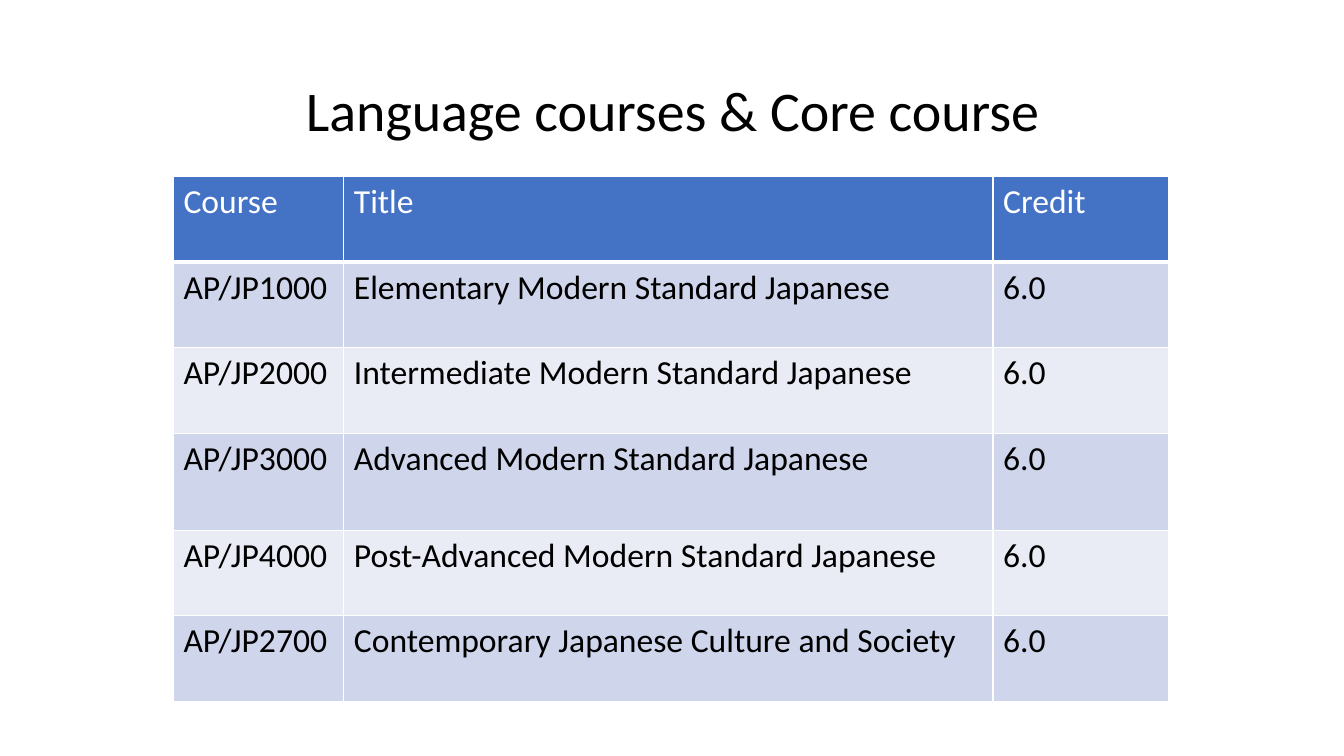
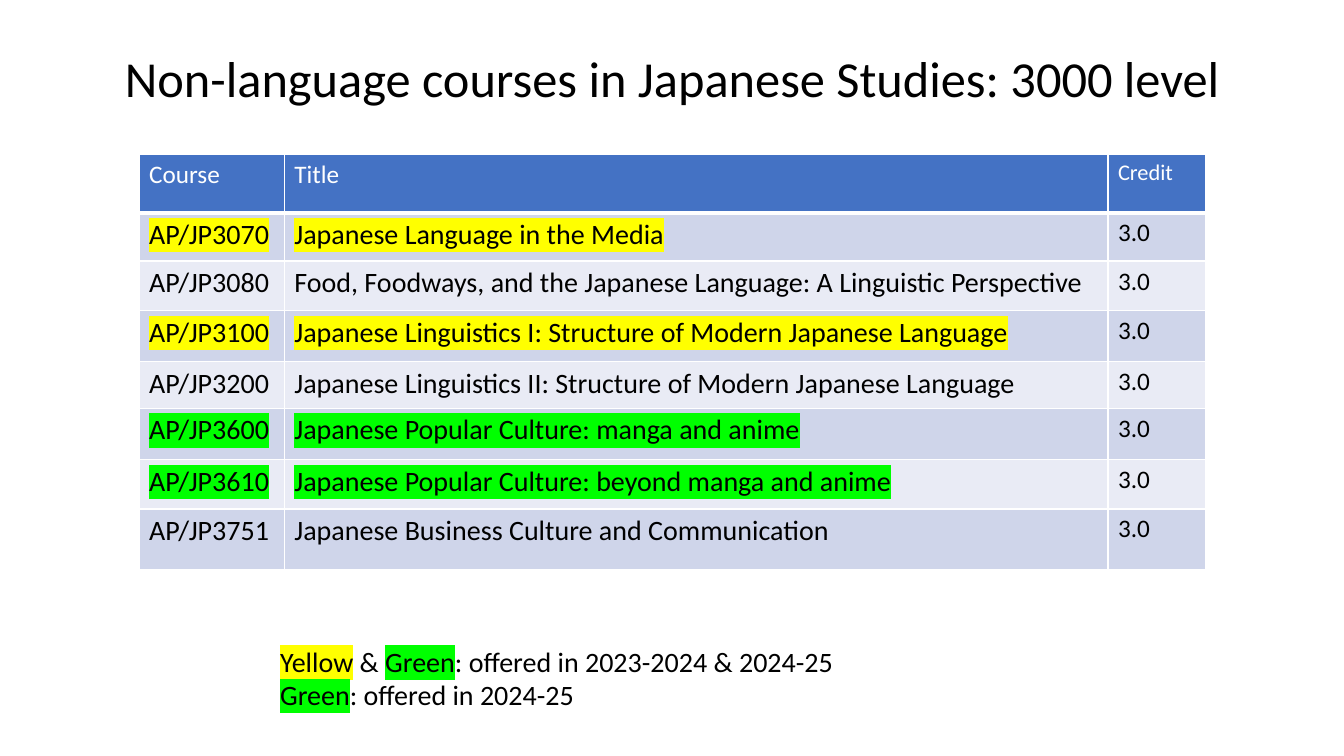
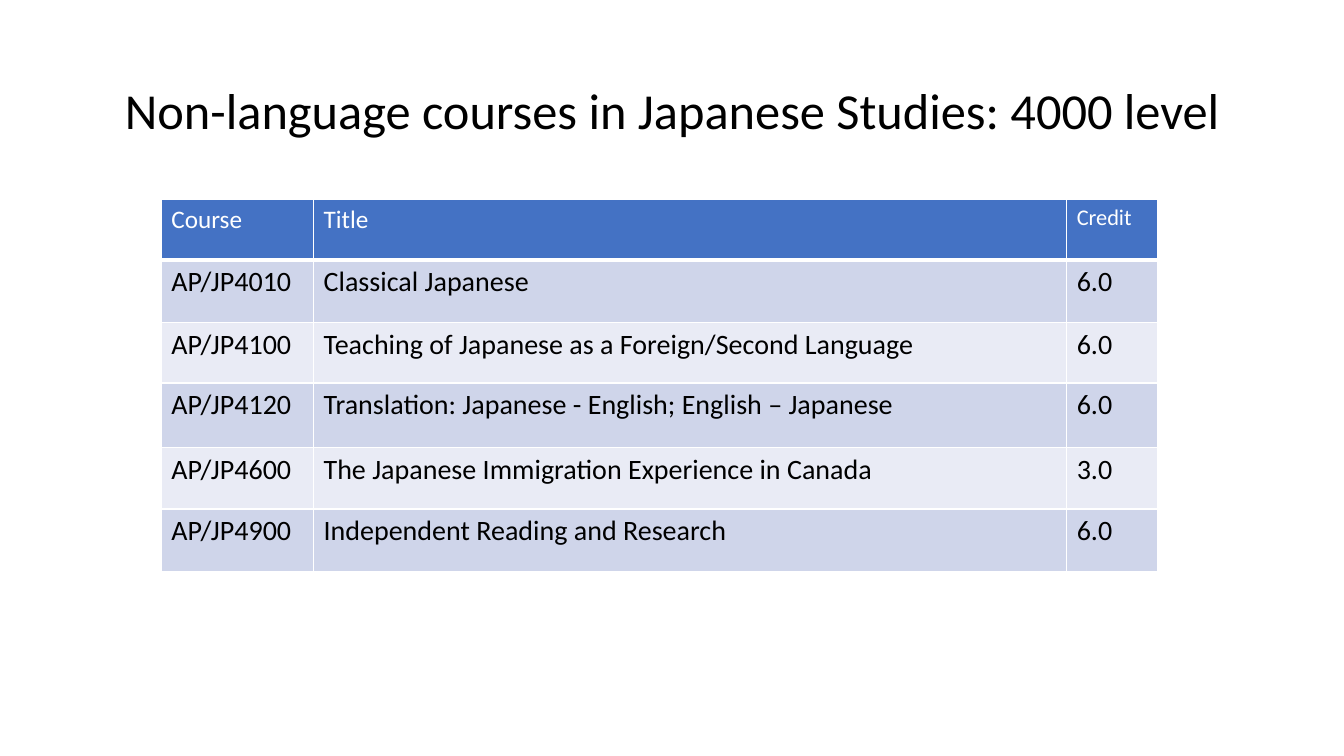
"""Course tables of a Japanese Studies programme, one per slide."""
from dataclasses import dataclass

from lxml import etree
from pptx import Presentation
from pptx import util as u
from pptx.dml.color import RGBColor
from pptx.enum import text
from pptx.oxml.ns import qn

PX = u.Inches(1) // 100
HEADINGS = ("Course", "Title", "Credit")


@dataclass(frozen=True)
class Theme:
    """Colours, font and type sizes shared by all slides."""
    font: str = "Calibri"
    ink: str = "000000"
    white: str = "FFFFFF"
    header: str = "4472C4"
    bands: tuple = ("CFD5EA", "E9EBF5")
    yellow: str = "FFFF00"
    green: str = "00FF00"
    title: int = 36
    title_large: int = 40
    large: int = 24
    body: int = 20
    label: int = 18
    small: int = 16
    rule: int = 1
    header_rule: int = 3


T = Theme()


def px(*lengths):
    """Turn pixel lengths into EMU."""
    return [n * PX for n in lengths]


def add_colour(parent, tag, colour):
    """Append an element that holds one RGB colour."""
    node = etree.SubElement(parent, qn(tag))
    etree.SubElement(node, qn("a:srgbClr")).set("val", colour)


def write(p, words, size=T.body, colour=T.ink, highlight=None):
    """Add one formatted run to a paragraph."""
    r = p.add_run()
    r.text = words
    r.font.size = u.Pt(size)
    r.font.color.rgb = RGBColor.from_string(colour)
    if highlight:
        add_colour(r.font._element, "a:highlight", highlight)
    r.font.name = T.font


def add_text_frame(s, box):
    """Add a wrapping text box and return its text frame."""
    tf = s.shapes.add_textbox(*px(*box)).text_frame
    tf.word_wrap = True
    return tf


def add_title(s, box, words, size=T.title):
    """Place a centred slide title in its box."""
    tf = add_text_frame(s, box)
    tf.vertical_anchor = text.MSO_ANCHOR.MIDDLE
    p = tf.paragraphs[0]
    p.alignment = text.PP_ALIGN.CENTER
    p.line_spacing = 0.9
    write(p, words, size)


def style_cell(cell, fill, bottom=T.rule):
    """Give a cell white borders and a solid fill."""
    tc_pr = cell._tc.get_or_add_tcPr()
    for side, width in zip("LRTB", (T.rule, T.rule, T.rule, bottom)):
        line = etree.SubElement(tc_pr, qn(f"a:ln{side}"), w=str(u.Pt(width)))
        add_colour(line, "a:solidFill", T.white)
    cell.fill.solid()
    cell.fill.fore_color.rgb = RGBColor.from_string(fill)


def add_courses(s, origin, widths, heights, courses, head_sizes, body_sizes, highlights=None):
    """Place a course table whose top left corner is at origin."""
    box = (*origin, sum(widths), sum(heights))
    table = s.shapes.add_table(len(heights), len(widths), *px(*box)).table
    for column, width in zip(table.columns, px(*widths)):
        column.width = width
    for row, height in zip(table.rows, px(*heights)):
        row.height = height
    for c, (words, size) in enumerate(zip(HEADINGS, head_sizes)):
        cell = table.cell(0, c)
        style_cell(cell, T.header, T.header_rule)
        write(cell.text_frame.paragraphs[0], words, size, T.white)
    for r, course in enumerate(courses, 1):
        mark = (highlights or {}).get(course[0])
        for c, (words, size) in enumerate(zip(course, body_sizes)):
            cell = table.cell(r, c)
            style_cell(cell, T.bands[(r - 1) % 2])
            write(cell.text_frame.paragraphs[0], words, size,
                  highlight=mark if c < 2 else None)


def add_legend(s, box, lines):
    """Place the key to the highlights, one paragraph per line."""
    tf = add_text_frame(s, box)
    for i, line in enumerate(lines):
        p = tf.add_paragraph() if i else tf.paragraphs[0]
        for words, mark in line:
            write(p, words, highlight=mark)


def language_slide(s):
    """Build the slide of language and core courses."""
    add_title(s, (92, 40, 1150, 145), "Language courses & Core course", T.title_large)
    add_courses(
        s, (172, 175), (169, 644, 174), (85, 85, 85, 96, 85, 85),
        [("AP/JP1000", "Elementary Modern Standard Japanese", "6.0"),
         ("AP/JP2000", "Intermediate Modern Standard Japanese", "6.0"),
         ("AP/JP3000", "Advanced Modern Standard Japanese", "6.0"),
         ("AP/JP4000", "Post-Advanced Modern Standard Japanese", "6.0"),
         ("AP/JP2700", "Contemporary Japanese Culture and Society", "6.0")],
        (T.large,) * 3, (T.large,) * 3)


def level_3000_slide(s):
    """Build the slide of 3000 level courses with its legend."""
    add_title(s, (92, 8, 1150, 145), "Non-language courses in Japanese Studies: 3000 level")
    add_courses(
        s, (138, 153), (144, 817, 97), (58, 48, 49, 51, 46, 51, 49, 60),
        [("AP/JP3070", "Japanese Language in the Media", "3.0"),
         ("AP/JP3080", "Food, Foodways, and the Japanese Language: A Linguistic Perspective", "3.0"),
         ("AP/JP3100", "Japanese Linguistics I: Structure of Modern Japanese Language", "3.0"),
         ("AP/JP3200", "Japanese Linguistics II: Structure of Modern Japanese Language", "3.0"),
         ("AP/JP3600", "Japanese Popular Culture: manga and anime", "3.0"),
         ("AP/JP3610", "Japanese Popular Culture: beyond manga and anime", "3.0"),
         ("AP/JP3751", "Japanese Business Culture and Communication", "3.0")],
        (T.label, T.label, T.small), (T.body, T.body, T.label),
        {"AP/JP3070": T.yellow, "AP/JP3100": T.yellow,
         "AP/JP3600": T.green, "AP/JP3610": T.green})
    add_legend(s, (268, 634, 608, 77), [
        [("Yellow", T.yellow), (" & ", None), ("Green", T.green),
         (": offered in 2023-2024 & 2024-25", None)],
        [("Green", T.green), (": offered in 2024-25", None)]])


def level_4000_slide(s):
    """Build the slide of 4000 level courses."""
    add_title(s, (92, 40, 1150, 145), "Non-language courses in Japanese Studies: 4000 level")
    add_courses(
        s, (160, 198), (151, 747, 90), (60, 62, 60, 64, 61, 62),
        [("AP/JP4010", "Classical Japanese", "6.0"),
         ("AP/JP4100", "Teaching of Japanese as a Foreign/Second Language", "6.0"),
         ("AP/JP4120", "Translation: Japanese - English; English – Japanese", "6.0"),
         ("AP/JP4600", "The Japanese Immigration Experience in Canada", "3.0"),
         ("AP/JP4900", "Independent Reading and Research", "6.0")],
        (T.label, T.label, T.small), (T.body,) * 3)


def main():
    """Build and save the presentation."""
    prs = Presentation()
    prs.slide_width, prs.slide_height = px(1333, 750)
    for build in (language_slide, level_3000_slide, level_4000_slide):
        build(prs.slides.add_slide(prs.slide_layouts[6]))
    prs.save("out.pptx")


if __name__ == "__main__":
    main()
